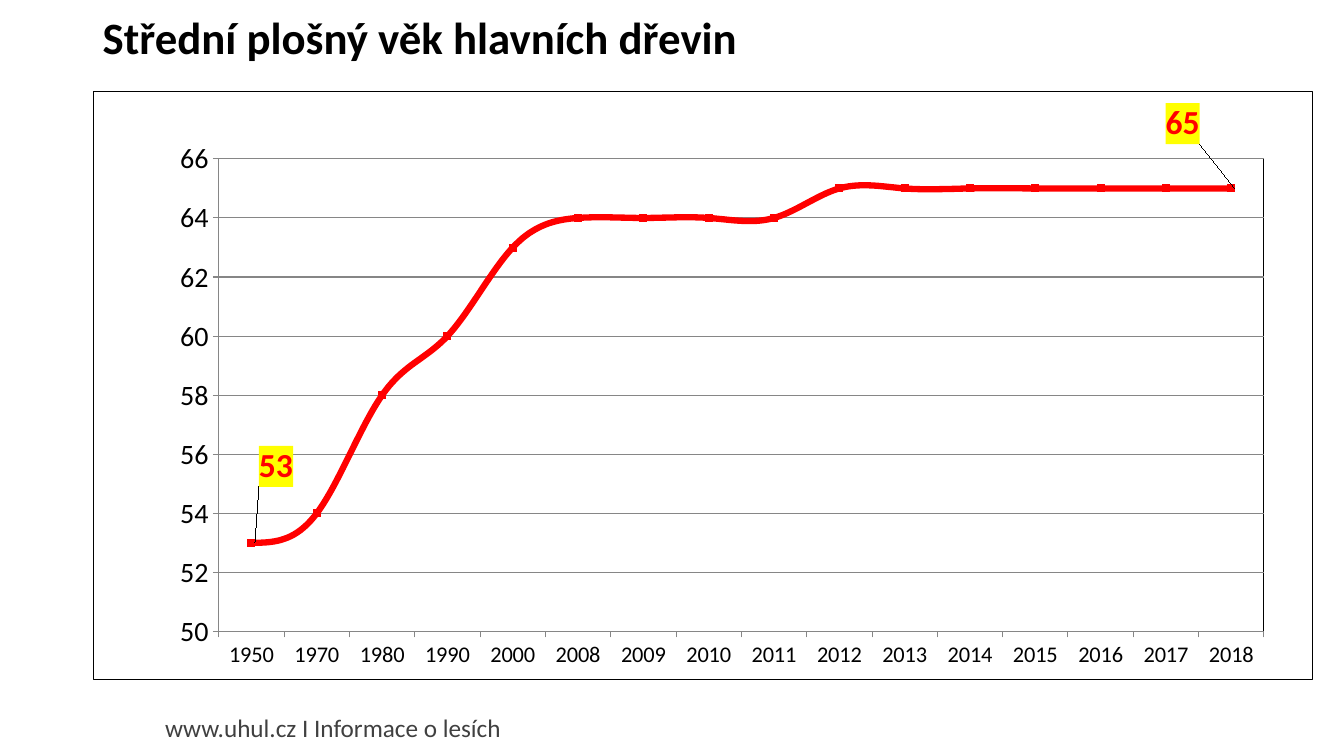
from dataclasses import dataclass

import pptx
import pptx.chart.data
import pptx.dml.color
import pptx.enum.chart
import pptx.enum.text
import pptx.oxml
import pptx.oxml.ns
import pptx.util

Pt = pptx.util.Pt
RGB = pptx.dml.color.RGBColor.from_string
ENUM = pptx.enum.chart
qn = pptx.oxml.ns.qn
CHART_NS = pptx.oxml.ns.nsdecls("c", "a")


@dataclass(frozen=True)
class Theme:
    font: str = "Calibri"
    ink: str = "000000"
    muted: str = "404040"
    grid: str = "868686"
    accent: str = "FF0000"
    highlight: str = "FFFF00"
    title_size: int = 32
    label_size: int = 24
    value_size: int = 20
    footer_size: int = 18
    year_size: int = 16


THEME = Theme()
TITLE = "Střední plošný věk hlavních dřevin"
YEARS = [1950, 1970, 1980, 1990, 2000, *range(2008, 2019)]
AGES = [53, 54, 58, 60, 63] + [64] * 4 + [65] * 7
# Point index: label offset as a share of the chart's width and height
LABEL_OFFSETS = {0: (0, -0.13), len(AGES) - 1: (-0.06, -0.11)}
PLOT_BOX = {"x": 0.103, "y": 0.115, "w": 0.857, "h": 0.803}


def style_font(font, size, color, bold=False):
    font.name = THEME.font
    font.size = Pt(size)
    font.bold = bold
    font.color.rgb = RGB(color)


def fill_text(shape, text, size, color, bold=False):
    frame = shape.text_frame
    frame.word_wrap = True
    frame.auto_size = pptx.enum.text.MSO_AUTO_SIZE.NONE
    frame.text = text
    para = frame.paragraphs[0]
    para.alignment = pptx.enum.text.PP_ALIGN.LEFT
    para.line_spacing = 0.9
    style_font(para.runs[0].font, size, color, bold)
    return frame


def add_title(page, left, top, width, height):
    title = page.shapes.title
    title.left, title.top, title.width, title.height = map(Pt, (left, top, width, height))
    frame = fill_text(title, TITLE, THEME.title_size, THEME.ink, bold=True)
    frame.vertical_anchor = pptx.enum.text.MSO_ANCHOR.MIDDLE


def add_footer(page, left, top, width, height):
    footer = page.shapes.add_textbox(*map(Pt, (left, top, width, height)))
    fill_text(footer, "www.uhul.cz I Informace o lesích", THEME.footer_size, THEME.muted)


def border_xml(color):
    return (f'<c:spPr {CHART_NS}><a:noFill/><a:ln w="{Pt(0.75)}"><a:solidFill>'
            f'<a:srgbClr val="{color}"/></a:solidFill></a:ln></c:spPr>')


def frame_chart(chart):
    """Fix the inner plot box and outline both the plot and the chart."""
    plot_area = chart._chartSpace.chart.plotArea
    for layout in plot_area.findall(qn("c:layout")):
        plot_area.remove(layout)
    modes = '<c:xMode val="edge"/><c:yMode val="edge"/>'
    sizes = "".join(f'<c:{key} val="{share}"/>' for key, share in PLOT_BOX.items())
    plot_area.insert(0, pptx.oxml.parse_xml(
        f'<c:layout {CHART_NS}><c:manualLayout><c:layoutTarget val="inner"/>'
        f'{modes}{sizes}</c:manualLayout></c:layout>'))
    plot_area.append(pptx.oxml.parse_xml(border_xml(THEME.ink)))
    chart._chartSpace.chart.addnext(pptx.oxml.parse_xml(border_xml(THEME.ink)))


def style_axes(chart):
    for axis, size in ((chart.category_axis, THEME.year_size),
                       (chart.value_axis, THEME.value_size)):
        style_font(axis.tick_labels.font, size, THEME.ink)
        axis.major_tick_mark = ENUM.XL_TICK_MARK.OUTSIDE
        axis.minor_tick_mark = ENUM.XL_TICK_MARK.NONE
        axis.format.line.color.rgb = RGB(THEME.grid)
        axis.format.line.width = Pt(0.75)
    ages = chart.value_axis
    ages.minimum_scale, ages.maximum_scale, ages.major_unit = 50, 66, 2
    ages.has_major_gridlines = True
    ages.major_gridlines.format.line.color.rgb = RGB(THEME.grid)
    ages.major_gridlines.format.line.width = Pt(0.75)


def style_series(series):
    series.smooth = True
    series.format.line.color.rgb = RGB(THEME.accent)
    series.format.line.width = Pt(4.5)
    series.marker.style = ENUM.XL_MARKER_STYLE.SQUARE
    series.marker.size = 5
    series.marker.format.fill.solid()
    series.marker.format.fill.fore_color.rgb = RGB(THEME.accent)
    series.marker.format.line.color.rgb = RGB(THEME.accent)


def label_ends(series):
    """Label the first and last points, offset and joined by leader lines."""
    series.data_labels.show_value = False
    for index, (across, down) in LABEL_OFFSETS.items():
        label = series.points[index].data_label
        style_font(label.font, THEME.label_size, THEME.accent, bold=True)
        label.position = ENUM.XL_LABEL_POSITION.RIGHT
        node = series.data_labels._element.find(f'{qn("c:dLbl")}[{qn("c:idx")}]')
        for candidate in series.data_labels._element.findall(qn("c:dLbl")):
            if candidate.find(qn("c:idx")).get("val") == str(index):
                node = candidate
        for old in node.findall(qn("c:spPr")):
            node.remove(old)
        node.find(qn("c:idx")).addnext(pptx.oxml.parse_xml(
            f'<c:layout {CHART_NS}><c:manualLayout><c:x val="{across}"/>'
            f'<c:y val="{down}"/></c:manualLayout></c:layout>'))
        node.find(qn("c:txPr")).addprevious(pptx.oxml.parse_xml(
            f'<c:spPr {CHART_NS}><a:solidFill><a:srgbClr val="{THEME.highlight}"/>'
            f'</a:solidFill></c:spPr>'))
    series.data_labels._element.append(pptx.oxml.parse_xml(
        f'<c:extLst {CHART_NS}><c:ext uri="{{CE6537A1-D6FC-4f65-9D91-7224C49458BB}}" '
        'xmlns:c15="http://schemas.microsoft.com/office/drawing/2012/chart">'
        '<c15:showLeaderLines val="1"/></c:ext></c:extLst>'))


def add_age_chart(page, left, top, width, height):
    data = pptx.chart.data.CategoryChartData()
    data.categories = [str(year) for year in YEARS]
    data.add_series("střední plošný věk hlavních dřevin", AGES)
    chart = page.shapes.add_chart(ENUM.XL_CHART_TYPE.LINE_MARKERS,
                                  *map(Pt, (left, top, width, height)), data).chart
    style_font(chart.font, 10, THEME.ink)
    chart.has_title = False
    chart.has_legend = False
    chart.plots[0].vary_by_categories = False
    style_axes(chart)
    style_series(chart.plots[0].series[0])
    label_ends(chart.plots[0].series[0])
    frame_chart(chart)


def main():
    deck = pptx.Presentation()
    deck.slide_width, deck.slide_height = Pt(960), Pt(540)
    page = deck.slides.add_slide(deck.slide_layouts[5])
    add_footer(page, 110.9, 507.6, 448.6, 28.8)
    add_title(page, 66.2, 9.4, 828, 38.2)
    add_age_chart(page, 66.2, 64.8, 871.9, 421.2)
    deck.save("out.pptx")


if __name__ == "__main__":
    main()
